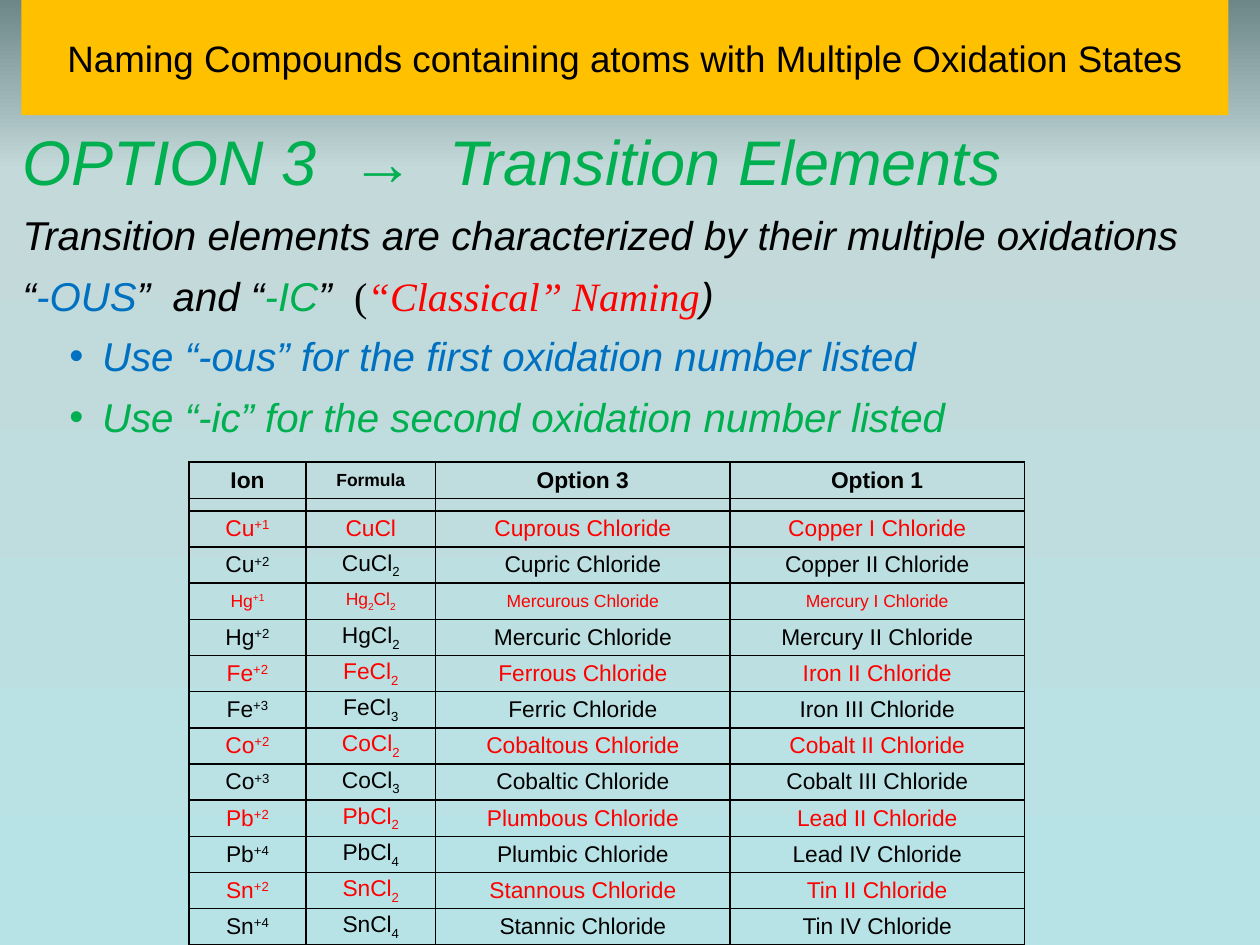
from dataclasses import dataclass
from itertools import cycle, groupby

from lxml import etree
from pptx import Presentation
from pptx import util as u
from pptx.dml.color import RGBColor
from pptx.enum import text
from pptx.oxml import ns


@dataclass(frozen=True)
class Theme:
    black: str = "000000"
    red: str = "FF0000"
    green: str = "00B050"
    blue: str = "0070C0"
    banner: str = "FFC000"
    backdrop: tuple = ((0, "6D8688"), (18, "C3D9DA"), (100, "B8E3E6"))
    sans: str = "Arial"
    serif: str = "Times New Roman"
    title: int = 21
    heading: int = 36
    body: int = 23
    cell: int = 13
    small: int = 10
    spacer: int = 4


THEME = Theme()
SUPERSCRIPT, SUBSCRIPT = 30000, -25000
HEADERS = ("Ion", "Formula", "Option 3", "Option 1")
COMPOUNDS = (
    ("Cu", "+1", "CuCl", "Cuprous", "Copper I"),
    ("Cu", "+2", "CuCl2", "Cupric", "Copper II"),
    ("Hg", "+1", "Hg2Cl2", "Mercurous", "Mercury I"),
    ("Hg", "+2", "HgCl2", "Mercuric", "Mercury II"),
    ("Fe", "+2", "FeCl2", "Ferrous", "Iron II"),
    ("Fe", "+3", "FeCl3", "Ferric", "Iron III"),
    ("Co", "+2", "CoCl2", "Cobaltous", "Cobalt II"),
    ("Co", "+3", "CoCl3", "Cobaltic", "Cobalt III"),
    ("Pb", "+2", "PbCl2", "Plumbous", "Lead II"),
    ("Pb", "+4", "PbCl4", "Plumbic", "Lead IV"),
    ("Sn", "+2", "SnCl2", "Stannous", "Tin II"),
    ("Sn", "+4", "SnCl4", "Stannic", "Tin IV"),
)


def add_xml(parent, tag, **attributes):
    return etree.SubElement(parent, ns.qn(tag), attributes)


def add_solid_fill(parent, color):
    add_xml(add_xml(parent, "a:solidFill"), "a:srgbClr", val=color)


def formula_parts(formula):
    """Split a formula into (text, baseline) pairs, digits being subscripts."""
    return [("".join(part), SUBSCRIPT if is_digit else 0)
            for is_digit, part in groupby(formula, str.isdigit)]


class SlideBuilder:
    def __init__(self, deck, theme):
        self.theme = theme
        self.width, self.height = deck.slide_width, deck.slide_height
        self.slide = deck.slides.add_slide(deck.slide_layouts[1])

    def place(self, left, top, width, height):
        """Turn shares of the slide's size into lengths."""
        return (int(left * self.width), int(top * self.height),
                int(width * self.width), int(height * self.height))

    def move(self, box, *shares):
        box.left, box.top, box.width, box.height = self.place(*shares)

    def backdrop(self):
        fill = self.slide.background.fill
        fill.gradient()
        fill.gradient_angle = 270
        stops = self.slide._element.find(".//" + ns.qn("a:gsLst"))
        for stop in list(stops):
            stops.remove(stop)
        for percent, color in self.theme.backdrop:
            stop = add_xml(stops, "a:gs", pos=str(percent * 1000))
            add_xml(stop, "a:srgbClr", val=color)

    def span(self, para, words, size, color=None, font=None,
             bold=False, italic=False, baseline=0):
        span = para.add_run()
        span.text = words
        span.font.name = font or self.theme.sans
        span.font.size = u.Pt(size)
        span.font.bold, span.font.italic = bold, italic
        span.font.color.rgb = RGBColor.from_string(color or self.theme.black)
        if baseline:
            span._r.get_or_add_rPr().set("baseline", str(baseline))

    def title(self, words, *shares):
        box = self.slide.shapes.title
        self.move(box, *shares)
        box.fill.solid()
        box.fill.fore_color.rgb = RGBColor.from_string(self.theme.banner)
        frame = box.text_frame
        frame.vertical_anchor = text.MSO_ANCHOR.MIDDLE
        frame.auto_size = text.MSO_AUTO_SIZE.NONE
        para = frame.paragraphs[0]
        para.alignment = text.PP_ALIGN.CENTER
        self.span(para, words, self.theme.title)

    def body(self, *shares):
        box = self.slide.placeholders[1]
        self.move(box, *shares)
        box.text_frame.word_wrap = True
        box.text_frame.auto_size = text.MSO_AUTO_SIZE.SHAPE_TO_FIT_TEXT
        return box.text_frame

    def line(self, para, spans, size, before=7, bullet=False):
        """Fill a paragraph with (words, color, style) spans."""
        para.space_before = u.Pt(before)
        props = para._p.get_or_add_pPr()
        props.set("marL", str(u.Inches(0.63 if bullet else 0)))
        props.set("indent", str(u.Inches(-0.26 if bullet else 0)))
        if bullet:
            add_xml(props, "a:buFont", typeface=self.theme.sans)
            add_xml(props, "a:buChar", char="•")
        else:
            add_xml(props, "a:buNone")
        for words, color, style in spans:
            self.span(para, words, size, color, **{"italic": True, **style})

    def cell(self, cell, parts, size, color=None, bold=False):
        cell.margin_left = cell.margin_right = u.Inches(0.07)
        cell.margin_top = cell.margin_bottom = 0
        cell.vertical_anchor = text.MSO_ANCHOR.MIDDLE
        para = cell.text_frame.paragraphs[0]
        para.alignment = text.PP_ALIGN.CENTER
        for words, baseline in parts:
            self.span(para, words, size, color, bold=bold, baseline=baseline)
        if not parts:
            add_xml(para._p, "a:endParaRPr", sz=str(size * 100))
        props = cell._tc.get_or_add_tcPr()
        for side in ("a:lnL", "a:lnR", "a:lnT", "a:lnB"):
            add_solid_fill(add_xml(props, side, w=str(u.Pt(1))), self.theme.black)
        cell.fill.background()

    def table(self, rows, columns, spacer_row, spacer_height, *shares):
        """Add a plain table whose rows are equal but for one thin spacer."""
        left, top, width, height = self.place(*shares)
        table = self.slide.shapes.add_table(
            rows, len(columns), left, top, width, height).table
        table.first_row = table.horz_banding = False
        for column, share in zip(table.columns, columns):
            column.width = int(width * share / sum(columns))
        spacer = int(height * spacer_height)
        for number, row in enumerate(table.rows):
            row.height = (spacer if number == spacer_row
                          else (height - spacer) // (rows - 1))
        return table


def add_rules(page):
    theme = page.theme
    frame = page.body(0.008, 0.123, 0.983, 0.345)
    page.line(frame.paragraphs[0],
              [("OPTION 3  →  Transition Elements", theme.green, {})],
              theme.heading, before=0)
    upright = {"font": theme.serif, "italic": False}
    lines = (
        (False, [("Transition elements are characterized by their multiple oxidations",
                  theme.black, {})]),
        (False, [("“", theme.black, {}), ("-OUS", theme.blue, {}),
                 ("”  and “", theme.black, {}), ("-IC", theme.green, {}),
                 ("”  ", theme.black, {}), ("(", theme.black, upright),
                 ("“Classical” Naming", theme.red, {"font": theme.serif}),
                 (")", theme.black, {})]),
        (True, [("Use “-ous” for the first oxidation number listed", theme.blue, {})]),
        (True, [("Use “-ic” for the second oxidation number listed", theme.green, {})]),
    )
    for bullet, spans in lines:
        page.line(frame.add_paragraph(), spans, theme.body, bullet=bullet)


def add_compounds(page):
    theme = page.theme
    table = page.table(len(COMPOUNDS) + 2, (0.93, 1.03, 2.34, 2.34), 1, 0.026,
                       0.15, 0.489, 0.663, 0.511)
    for column, header in enumerate(HEADERS):
        size = theme.small if header == "Formula" else theme.cell
        page.cell(table.cell(0, column), [(header, 0)], size, bold=True)
        page.cell(table.cell(1, column), [], theme.spacer)
    colors = cycle((theme.red, theme.black))
    for row, (compound, color) in enumerate(zip(COMPOUNDS, colors), start=2):
        symbol, charge, formula, classical, stock = compound
        size = theme.small if classical == "Mercurous" else theme.cell
        contents = ([(symbol, 0), (charge, SUPERSCRIPT)], formula_parts(formula),
                    [(f"{classical} Chloride", 0)], [(f"{stock} Chloride", 0)])
        for column, parts in enumerate(contents):
            page.cell(table.cell(row, column), parts, size, color)


def main():
    deck = Presentation()
    deck.slide_width, deck.slide_height = u.Inches(10), u.Inches(7.5)
    page = SlideBuilder(deck, THEME)
    page.backdrop()
    page.title("Naming Compounds containing atoms with Multiple Oxidation States",
               0.017, 0, 0.958, 0.122)
    add_rules(page)
    add_compounds(page)
    deck.save("out.pptx")


if __name__ == "__main__":
    main()
